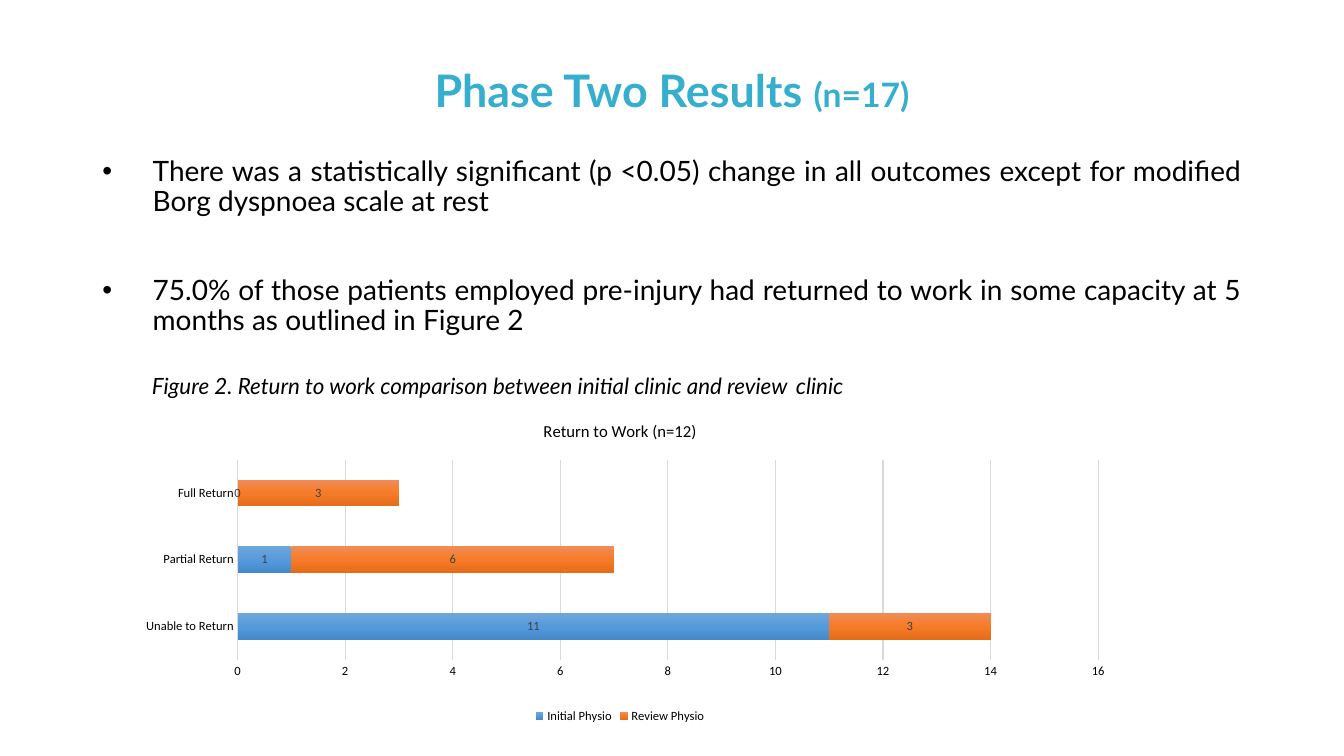
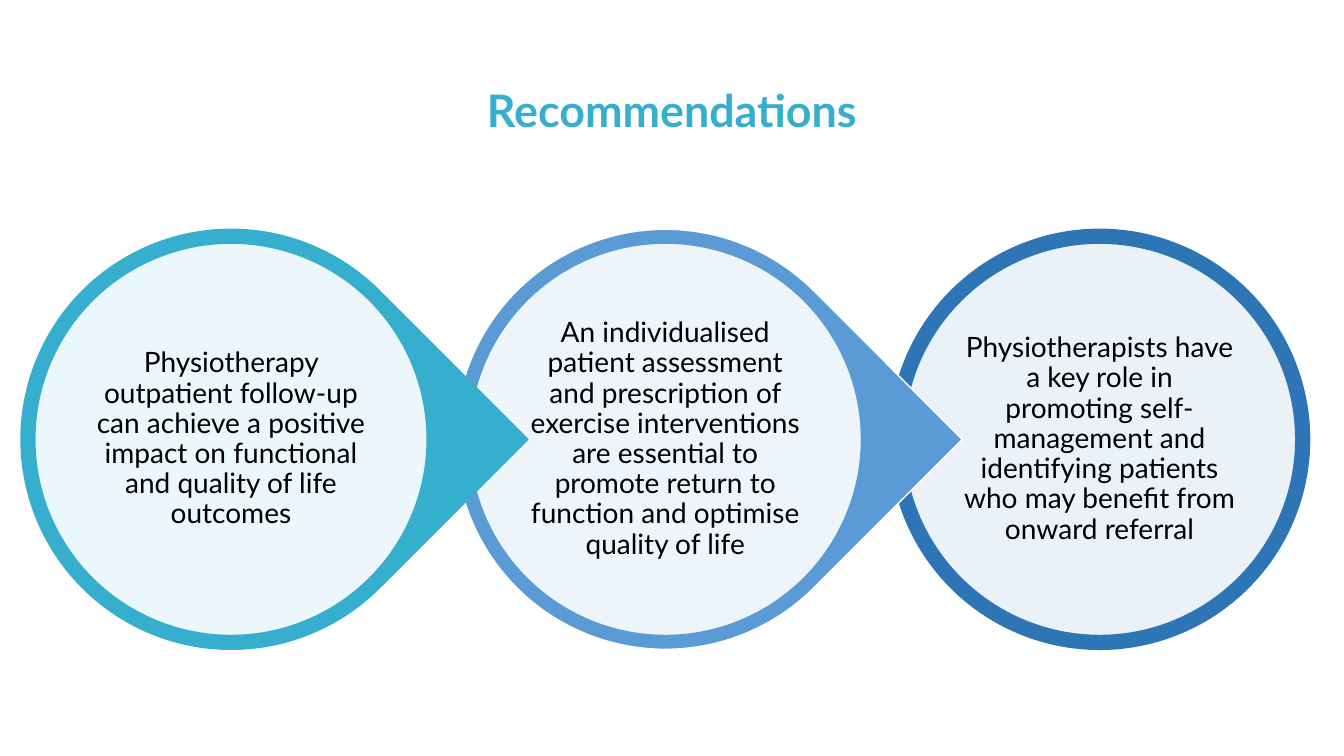
import lxml.etree
import pptx
import pptx.chart.data
import pptx.dml.color
import pptx.enum.chart
import pptx.enum.shapes
import pptx.enum.text
import pptx.oxml.ns
import pptx.util

RGB = pptx.dml.color.RGBColor
Pt = pptx.util.Pt
Inches = pptx.util.Inches
qn = pptx.oxml.ns.qn
Align = pptx.enum.text.PP_ALIGN
Anchor = pptx.enum.text.MSO_ANCHOR
Shape = pptx.enum.shapes.MSO_SHAPE
Tick = pptx.enum.chart.XL_TICK_MARK

BLACK = RGB(0x00, 0x00, 0x00)
WHITE = RGB(0xFF, 0xFF, 0xFF)
TEAL = RGB(0x36, 0xAF, 0xCE)
BLUE = RGB(0x5B, 0x9B, 0xD5)
DEEP_BLUE = RGB(0x2E, 0x75, 0xB6)
LABEL_GREY = RGB(0x40, 0x40, 0x40)
GRID_GREY = RGB(0xD9, 0xD9, 0xD9)
BLUE_SHADES = (RGB(0x71, 0xA6, 0xDB), RGB(0x55, 0x9B, 0xDB), RGB(0x44, 0x8A, 0xCA))
ORANGE_SHADES = (RGB(0xF1, 0x8C, 0x57), RGB(0xF6, 0x7B, 0x28), RGB(0xE5, 0x6C, 0x19))

COLUMNS, ROWS = 160, 90
TITLE = {"name": "Lato", "size": Pt(32), "bold": True}
BODY = {"name": "Lato", "size": Pt(20)}
CAPTION = {"name": "Lato", "size": Pt(16), "italic": True}
CHART = {"name": "Calibri", "size": Pt(9), "bold": False}
CENTRED = {"alignment": Align.CENTER, "line_spacing": 0.9}
JUSTIFIED = {"alignment": Align.JUSTIFY, "line_spacing": 0.9}


def apply(target, values):
    for key, value in values.items():
        setattr(target, key, value)


def style(font, values, color=BLACK):
    apply(font, values)
    font.color.rgb = color


class Deck:
    """Slides on a grid of square cells, with one shared style."""

    def __init__(self):
        self.presentation = pptx.Presentation()
        self.presentation.slide_width = Inches(13.333)
        self.presentation.slide_height = Inches(7.5)
        self.cell = self.presentation.slide_height / ROWS
        self.slide = None

    def add_slide(self):
        blank = self.presentation.slide_layouts[6]
        self.slide = self.presentation.slides.add_slide(blank)

    def place(self, *cells):
        return [round(count * self.cell) for count in cells]

    def around(self, column, row, size):
        return self.place(column - size / 2, row - size / 2, size, size)

    def text(self, box, paragraphs, layout, color=BLACK, frame=None):
        text_frame = self.slide.shapes.add_textbox(*box).text_frame
        apply(text_frame, {"word_wrap": True, **(frame or {})})
        for index, runs in enumerate(paragraphs):
            paragraph = text_frame.add_paragraph() if index else text_frame.paragraphs[0]
            apply(paragraph, layout)
            for words, font in runs:
                run = paragraph.add_run()
                run.text = words
                style(run.font, font, color)
        return text_frame

    def title(self, runs, bottom=0.05):
        frame = {"vertical_anchor": Anchor.MIDDLE, "margin_bottom": Inches(bottom)}
        self.text(self.place(11, 4.8, 138, 17.4), [runs], CENTRED, TEAL, frame)

    def bullets(self, box, findings):
        frame = self.text(box, [[(finding, BODY)] for finding in findings], JUSTIFIED)
        for index, paragraph in enumerate(frame.paragraphs):
            paragraph.space_before = Pt(42 if index else 10)
            properties = paragraph._p.get_or_add_pPr()
            properties.set("marL", str(Inches(0.5)))
            properties.set("indent", str(-Inches(0.5)))
            lxml.etree.SubElement(properties, qn("a:buFont"), typeface="Arial")
            lxml.etree.SubElement(properties, qn("a:buChar"), char="•")

    def shape(self, kind, box, fill, line, opacity=None, rotation=0):
        shape = self.slide.shapes.add_shape(kind, *box)
        shape.shadow.inherit = False
        shape.rotation = rotation
        shape.fill.solid()
        shape.fill.fore_color.rgb = fill
        shape.line.color.rgb = line
        shape.line.width = Pt(1)
        if opacity:
            color = shape._element.spPr.find(qn("a:solidFill"))[0]
            lxml.etree.SubElement(color, qn("a:alpha"), val=str(opacity * 1000))

    def recommendation(self, column, words, kind, color, edge, rotation):
        row = 52.3
        self.shape(kind, self.around(column, row, 50), color, edge, rotation=rotation)
        self.shape(Shape.OVAL, self.around(column, row, 46.7), WHITE, color, opacity=90)
        margins = {f"margin_{side}": Inches(0.03) for side in ("left", "top", "right", "bottom")}
        self.text(self.around(column, row, 33.4), [[(words, BODY)]], CENTRED,
                  frame={"vertical_anchor": Anchor.MIDDLE, **margins})

    def stacked_bars(self, box, heading, categories, series, plot):
        data = pptx.chart.data.CategoryChartData()
        data.categories = categories
        for name, values, _ in series:
            data.add_series(name, values)
        kind = pptx.enum.chart.XL_CHART_TYPE.BAR_STACKED
        chart = self.slide.shapes.add_chart(kind, *box, data).chart
        style(chart.font, CHART)

        chart.has_title = True
        chart.chart_title.include_in_layout = False
        chart.chart_title.text_frame.text = heading
        style(chart.chart_title.text_frame.paragraphs[0].runs[0].font, {**CHART, "size": Pt(12)})
        chart.has_legend = True
        apply(chart.legend, {"position": pptx.enum.chart.XL_LEGEND_POSITION.BOTTOM,
                             "include_in_layout": False})
        style(chart.legend.font, CHART)

        for axis in (chart.category_axis, chart.value_axis):
            apply(axis, {"major_tick_mark": Tick.NONE, "minor_tick_mark": Tick.NONE})
            style(axis.tick_labels.font, CHART)
        apply(chart.value_axis, {"minimum_scale": 0, "maximum_scale": 16, "major_unit": 2,
                                 "has_major_gridlines": True})
        chart.value_axis.format.line.fill.background()
        for line, width in ((chart.category_axis.format.line, 1),
                            (chart.value_axis.major_gridlines.format.line, 0.75)):
            line.color.rgb = GRID_GREY
            line.width = Pt(width)

        bars = chart.plots[0]
        apply(bars, {"gap_width": 150, "overlap": 100, "vary_by_categories": False})
        for bar in bars.series:
            bar.format.fill.gradient()
            bar.format.fill.gradient_angle = 270
            bar.data_labels.show_value = True
            style(bar.data_labels.font, CHART, LABEL_GREY)
        for stops, (_, _, shades) in zip(chart.element.iter(qn("a:gsLst")), series):
            for stop in list(stops):
                stops.remove(stop)
            for position, shade in zip((0, 50000, 100000), shades):
                stop = lxml.etree.SubElement(stops, qn("a:gs"), pos=str(position))
                lxml.etree.SubElement(stop, qn("a:srgbClr"), val=str(shade))
        self.fix_plot(chart, plot)

    def fix_plot(self, chart, plot):
        area = chart.element.find(".//" + qn("c:plotArea"))
        for layout in area.findall(qn("c:layout")):
            area.remove(layout)
        layout = lxml.etree.Element(qn("c:layout"))
        area.insert(0, layout)
        manual = lxml.etree.SubElement(layout, qn("c:manualLayout"))
        settings = {"layoutTarget": "inner", "xMode": "edge", "yMode": "edge",
                    **dict(zip("xywh", plot))}
        for key, value in settings.items():
            lxml.etree.SubElement(manual, qn(f"c:{key}"), val=str(value))


def add_results(deck):
    deck.add_slide()
    deck.title([("Phase Two Results ", TITLE), ("(n=17)", {**TITLE, "size": Pt(24)})], bottom=0.45)
    deck.bullets(deck.place(11, 18.1, 138, 35.9), [
        "There was a statistically significant (p <0.05) change in all outcomes "
        "except for modified Borg dyspnoea scale at rest",
        "75.0% of those patients employed pre-injury had returned to work "
        "in some capacity at 5 months as outlined in Figure 2",
    ])
    deck.stacked_bars(
        deck.place(16.9, 48.2, 114.6, 38.4), "Return to Work (n=12)",
        ["Unable to Return", "Partial Return", "Full Return"],
        [("Initial Physio", (11, 1, 0), BLUE_SHADES),
         ("Review Physio", (3, 6, 3), ORANGE_SHADES)],
        plot=(0.1, 0.17, 0.9, 0.62))
    deck.text(deck.place(16.9, 42.4, 93.7, 4.4), [[
        ("Figure 2. Return to work comparison between initial clinic and review", CAPTION),
        (" ", {**CAPTION, "size": Pt(24)}),
        ("clinic", CAPTION),
    ]], {"alignment": Align.LEFT})


def add_recommendations(deck):
    deck.add_slide()
    deck.title([("Recommendations", TITLE)])
    steps = [
        ("Physiotherapy outpatient follow-up can achieve a positive impact on "
         "functional and quality of life outcomes", Shape.TEAR, TEAL, TEAL, 45),
        ("An individualised patient assessment and prescription of exercise interventions "
         "are essential to promote return to function and optimise quality of life",
         Shape.TEAR, BLUE, WHITE, 45),
        ("Physiotherapists have a key role in promoting self-management and identifying "
         "patients who may benefit from onward referral", Shape.OVAL, DEEP_BLUE, DEEP_BLUE, 0),
    ]
    for index, step in reversed(list(enumerate(steps))):
        deck.recommendation(27.5 + 51.7 * index, *step)


def main():
    deck = Deck()
    add_results(deck)
    add_recommendations(deck)
    deck.presentation.save("out.pptx")


if __name__ == "__main__":
    main()
